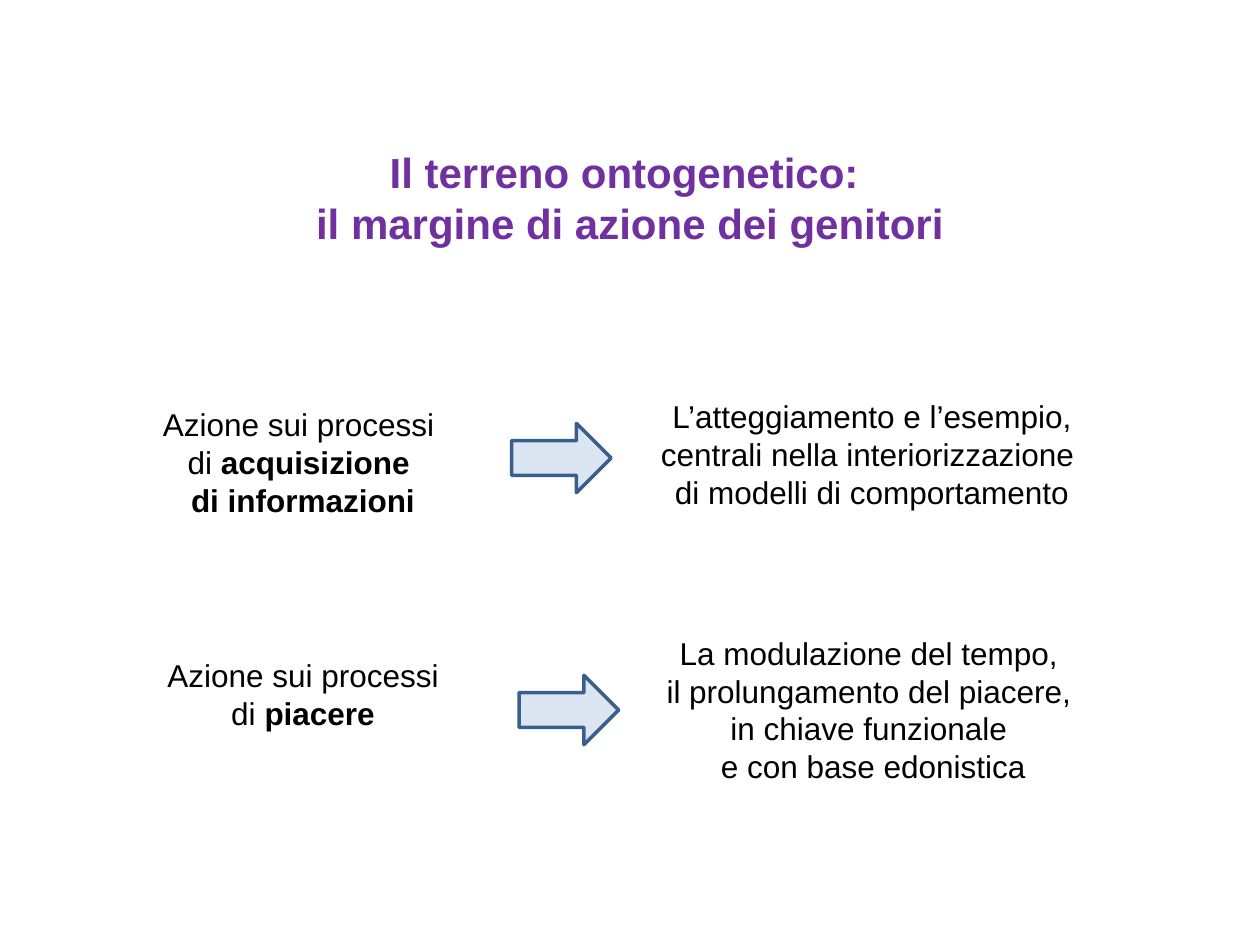
from dataclasses import dataclass

from lxml import etree
from pptx import Presentation
from pptx.dml.color import RGBColor
from pptx.enum.shapes import MSO_SHAPE
from pptx.enum.text import MSO_ANCHOR, MSO_AUTO_SIZE, PP_ALIGN
from pptx.util import Pt

CENTER = PP_ALIGN.CENTER
MIDDLE = MSO_ANCHOR.MIDDLE
NO_AUTOFIT = MSO_AUTO_SIZE.NONE
RIGHT_ARROW = MSO_SHAPE.RIGHT_ARROW
TITLE_ONLY = 5


@dataclass(frozen=True)
class Theme:
    """Hold the colours and type sizes of the deck."""

    font: str = "Arial"
    title_size: int = 24
    body_size: int = 18
    title_color: str = "7030A0"
    text_color: str = "000000"
    arrow_fill: str = "DCE6F2"
    arrow_line: str = "3A5F8C"
    arrow_line_width: int = 2


class SlideBuilder:
    """Add styled elements to the current slide."""

    def __init__(self, slide, theme):
        """Keep the slide and its theme."""
        self.slide = slide
        self.theme = theme

    def style_span(self, span, size, color, bold):
        """Format one run of text."""
        span.font.name = self.theme.font
        span.font.size = Pt(size)
        span.font.bold = bold
        span.font.color.rgb = RGBColor.from_string(color)

    def prepare_frame(self, frame):
        """Make a text frame wrap and centre vertically."""
        frame.word_wrap = True
        frame.auto_size = NO_AUTOFIT
        frame.vertical_anchor = MIDDLE

    def title(self, text, left, top, width, height):
        """Place and format the title placeholder."""
        box = self.slide.shapes.title
        box.left, box.top, box.width, box.height = map(Pt, (left, top, width, height))
        box.text_frame.text = text
        self.prepare_frame(box.text_frame)
        para = box.text_frame.paragraphs[0]
        para.alignment = CENTER
        for span in para.runs:
            self.style_span(span, self.theme.title_size, self.theme.title_color, True)

    def text(self, paragraphs, left, top, width, height):
        """Add centred paragraphs made of (plain, bold) text pairs."""
        box = self.slide.shapes.add_textbox(*map(Pt, (left, top, width, height)))
        frame = box.text_frame
        self.prepare_frame(frame)
        for index, (plain, strong) in enumerate(paragraphs):
            para = frame.add_paragraph() if index else frame.paragraphs[0]
            para.alignment = CENTER
            for words, bold in ((plain, False), (strong, True)):
                if words:
                    span = para.add_run()
                    span.text = words
                    self.style_span(span, self.theme.body_size, self.theme.text_color, bold)

    def arrow(self, left, top, width, height):
        """Add a block arrow pointing right."""
        arrow = self.slide.shapes.add_shape(RIGHT_ARROW, *map(Pt, (left, top, width, height)))
        arrow.shadow.inherit = False
        arrow.fill.solid()
        arrow.fill.fore_color.rgb = RGBColor.from_string(self.theme.arrow_fill)
        arrow.line.color.rgb = RGBColor.from_string(self.theme.arrow_line)
        arrow.line.width = Pt(self.theme.arrow_line_width)


def main():
    """Build and save the deck."""
    deck = Presentation()
    deck.slide_width, deck.slide_height = Pt(720), Pt(540)
    page = SlideBuilder(deck.slides.add_slide(deck.slide_layouts[TITLE_ONLY]), Theme())

    page.title(
        "Il terreno ontogenetico: \vil margine di azione dei genitori",
        54, 54.7, 612, 116,
    )

    information_action = [
        ("Azione sui processi ", ""),
        ("di ", "acquisizione "),
        ("", "di informazioni"),
    ]
    information_margin = [
        ("L’atteggiamento e l’esempio, centrali nella interiorizzazione ", ""),
        ("di modelli di comportamento", ""),
    ]
    pleasure_action = [("Azione sui processi di ", "piacere")]
    pleasure_margin = [
        ("La modulazione del tempo, ", ""),
        ("il prolungamento del piacere, ", ""),
        ("in chiave funzionale ", ""),
        ("e con base edonistica", ""),
    ]

    action_left, action_width = 82.8, 180.7
    margin_width, margin_height = 283.7, 99.4
    arrow_width, arrow_height = 56.9, 39.6
    rows = [
        (information_action, 229.7, 68.4, (292.3, 241.9), information_margin, (356.4, 209.5)),
        (pleasure_action, 367.2, 59, (296.6, 385.9), pleasure_margin, (357.1, 355.7)),
    ]
    for action, action_top, action_height, arrow_at, margin, margin_at in rows:
        page.text(action, action_left, action_top, action_width, action_height)
        page.arrow(*arrow_at, arrow_width, arrow_height)
        page.text(margin, *margin_at, margin_width, margin_height)

    deck.save("out.pptx")


if __name__ == "__main__":
    main()
